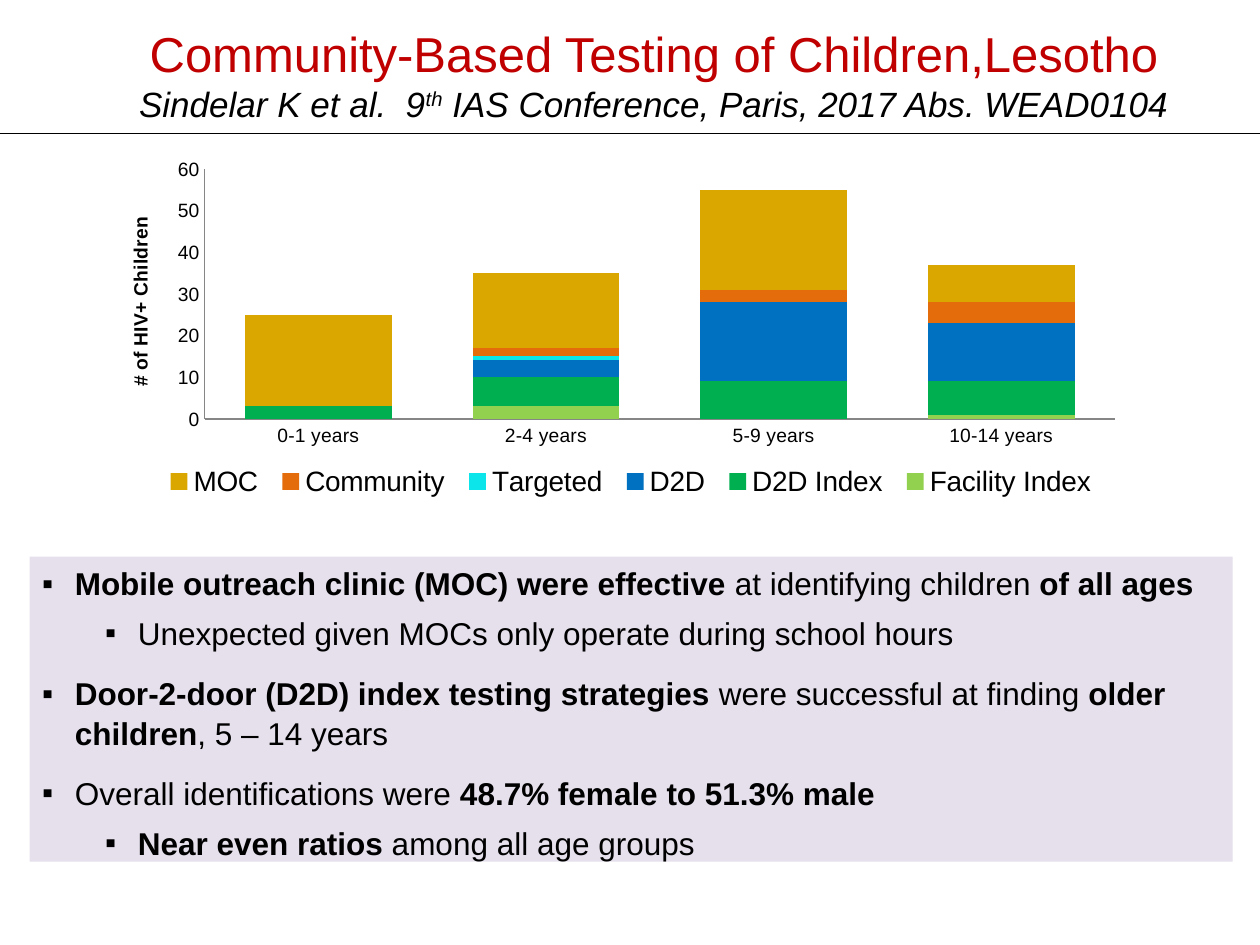
from lxml.etree import SubElement
from pptx import Presentation
from pptx.chart.data import CategoryChartData
from pptx.dml.color import RGBColor
from pptx.enum.chart import XL_CHART_TYPE, XL_LEGEND_POSITION, XL_TICK_MARK
from pptx.enum.shapes import MSO_CONNECTOR, MSO_SHAPE
from pptx.enum.text import MSO_ANCHOR, PP_ALIGN
from pptx.oxml import parse_xml
from pptx.oxml.ns import nsdecls, qn
from pptx.util import Cm, Pt


def color(value):
    return RGBColor.from_string(value)


def add_span(para, text, **formats):
    """Add a run in black Arial unless the formats say otherwise."""
    span = para.add_run()
    span.text = text
    span.font.color.rgb = color(formats.pop("ink", "000000"))
    for name, value in ({"name": "Arial"} | formats).items():
        setattr(span.font, name, value)
    return span


deck = Presentation()
deck.slide_width, deck.slide_height = Cm(25.4), Cm(19.05)
page = deck.slides.add_slide(deck.slide_layouts[6])

# Rule under the title
rule = page.shapes.add_connector(MSO_CONNECTOR.STRAIGHT, 0, Cm(2.69), Cm(25.4), Cm(2.69))
rule.line.color.rgb = color("000000")
rule.line.width = Pt(0.75)
SubElement(rule.element.spPr, qn("a:effectLst"))

# Stacked column chart
data = CategoryChartData()
data.categories = ["0-1 years", "2-4 years", "5-9 years", "10-14 years"]
series_table = [
    ("Facility Index", (0, 3, 0, 1), "92D050"),
    ("D2D Index", (3, 7, 9, 8), "00B050"),
    ("D2D", (0, 4, 19, 14), "0070C0"),
    ("Targeted", (0, 1, 0, 0), "0CE5EA"),
    ("Community", (0, 2, 3, 5), "E46C0A"),
    ("MOC", (22, 18, 24, 9), "DAA600"),
]
for name, values, fill in series_table:
    data.add_series(name, values)
chart = page.shapes.add_chart(
    XL_CHART_TYPE.COLUMN_STACKED, Cm(1.9), Cm(3.18), Cm(20.6), Cm(6.98), data).chart
chart.has_title = False
chart.font.name, chart.font.size = "Arial", Pt(11)
chart.font.color.rgb = color("000000")

plot = chart.plots[0]
plot.gap_width, plot.overlap, plot.vary_by_categories = 55, 100, False
for series, (name, values, fill) in zip(plot.series, series_table):
    series.format.fill.solid()
    series.format.fill.fore_color.rgb = color(fill)

for axis in (chart.category_axis, chart.value_axis):
    axis.has_major_gridlines = False
    axis.major_tick_mark = axis.minor_tick_mark = XL_TICK_MARK.NONE
    axis.format.line.color.rgb = color("868686")
    axis.format.line.width = Pt(0.75)
scale = chart.value_axis
scale.minimum_scale, scale.maximum_scale, scale.major_unit = 0, 60, 10
add_span(scale.axis_title.text_frame.paragraphs[0], "# of HIV+ Children",
         size=Pt(11), bold=True)

chart.has_legend = True
legend = chart.legend
legend.position = XL_LEGEND_POSITION.RIGHT
legend.include_in_layout = False
legend.font.name, legend.font.size = "Arial", Pt(16)
legend.font.color.rgb = color("000000")

# Manual places for the plot and the legend, as fractions of the chart
plot_area = chart.element.chart.plotArea
for old in plot_area.findall(qn("c:layout")):
    plot_area.remove(old)
legend_element = chart.element.chart.find(qn("c:legend"))
for old in legend_element.findall(qn("c:layout")):
    legend_element.remove(old)
for parent, index, target, fractions in (
    (plot_area, 0, '<c:layoutTarget val="inner"/>', (0.108, 0.03, 0.891, 0.724)),
    (legend_element, 1, "", (0.06, 0.87, 0.93, 0.13)),
):
    sizes = "".join(f'<c:{tag} val="{value}"/>' for tag, value in zip("xywh", fractions))
    parent.insert(index, parse_xml(
        f'<c:layout {nsdecls("c")}><c:manualLayout>{target}<c:xMode val="edge"/>'
        f'<c:yMode val="edge"/>{sizes}</c:manualLayout></c:layout>'))

# Findings: level, space after, (text, bold) spans
findings = [
    (0, 6, [("Mobile outreach clinic (MOC) were effective ", True),
            ("at identifying children ", False), ("of all ages", True)]),
    (1, 12, [("Unexpected given MOCs only operate during school hours", False)]),
    (0, 12, [("Door-2-door (D2D) index testing strategies ", True),
             ("were successful at finding ", False),
             ("older children", True), (", 5 – 14 years", False)]),
    (0, 6, [("Overall identifications were ", False),
            ("48.7% female to 51.3% male", True)]),
    (1, 12, [("Near even ratios ", True), ("among all age groups", False)]),
]
box = page.shapes.add_shape(MSO_SHAPE.RECTANGLE, Cm(0.6), Cm(11.22), Cm(24.25), Cm(6.15))
box.shadow.inherit = False
box.fill.solid()
box.fill.fore_color.rgb = color("E6E0EC")
box.line.fill.background()
frame = box.text_frame
frame.word_wrap = True
frame.vertical_anchor = MSO_ANCHOR.TOP
for number, (level, space, spans) in enumerate(findings):
    para = frame.add_paragraph() if number else frame.paragraphs[0]
    para.level, para.alignment = level, PP_ALIGN.LEFT
    para.space_after, para.line_spacing = Pt(space), 1.04
    properties = para._p.get_or_add_pPr()
    properties.set("marL", str(Cm(0.66 + 1.27 * level)))
    properties.set("indent", str(-Cm(0.66)))
    SubElement(properties, qn("a:buFont"), typeface="Arial")
    SubElement(properties, qn("a:buChar"), char="▪")
    for text, bold in spans:
        add_span(para, text, size=Pt(18), bold=bold)

# Title and citation
title = page.shapes.add_textbox(Cm(1.75), Cm(-0.1), Cm(22.86), Cm(3.18)).text_frame
title.word_wrap = True
title.vertical_anchor = MSO_ANCHOR.MIDDLE
para = title.paragraphs[0]
para.alignment = PP_ALIGN.CENTER
add_span(para, "Community-Based Testing of Children,Lesotho", size=Pt(28), ink="C00000")
para.add_line_break()
citation = {"size": Pt(20), "italic": True}
add_span(para, "Sindelar K et al.  9", **citation)
ordinal = add_span(para, "th", **citation)
ordinal.font._element.set("baseline", "30000")
add_span(para, " IAS Conference, Paris, 2017 Abs. WEAD0104", **citation)

deck.save("out.pptx")
